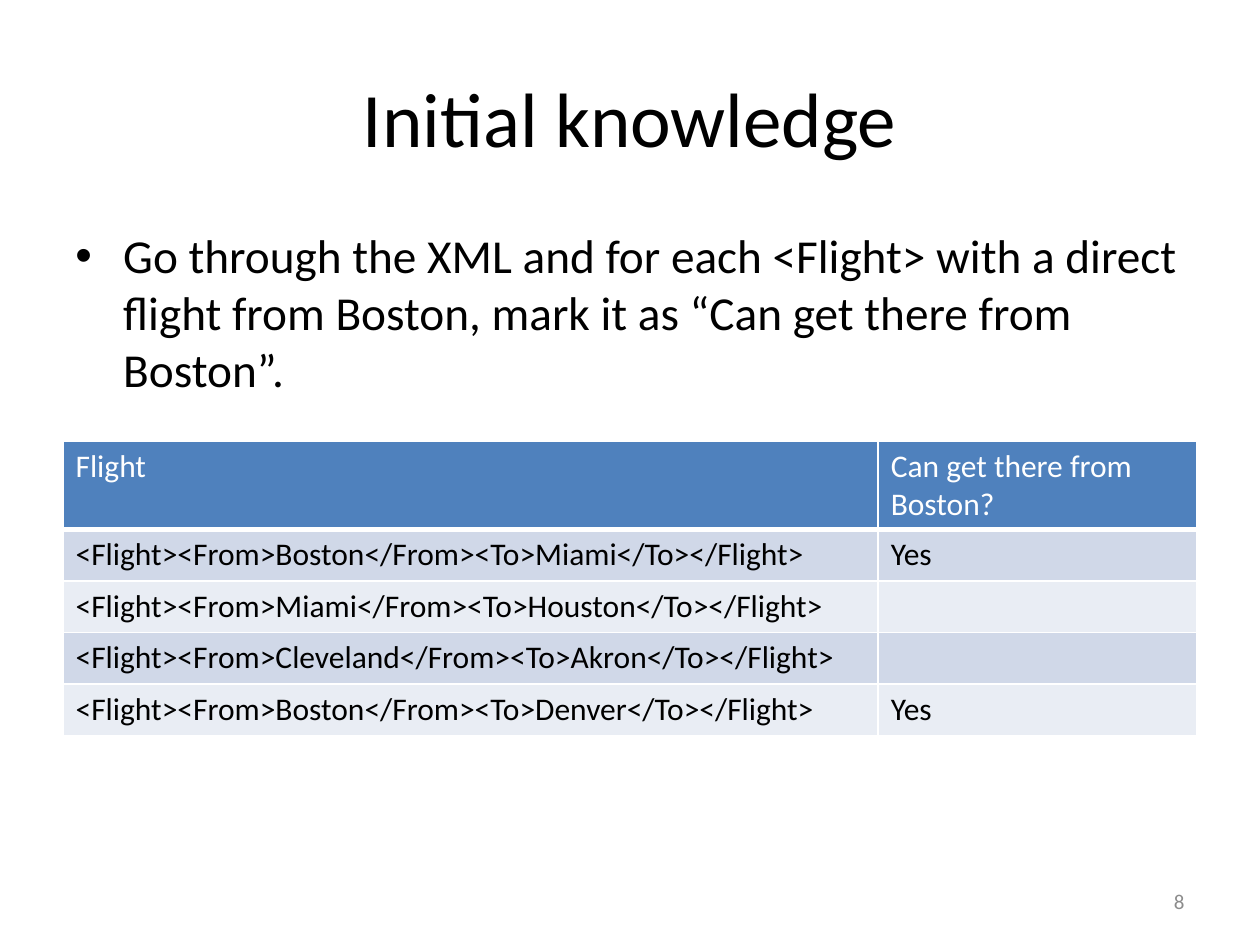
import pptx
import pptx.dml.color
import pptx.enum.text
import pptx.oxml.ns
import pptx.util
from lxml import etree
from pptx.util import Inches

FONT = "Calibri"
COLORS = {
    "text": "000000",
    "header_text": "FFFFFF",
    "header": "4F81BD",
    "band_dark": "D0D8E8",
    "band_light": "E9EDF4",
    "border": "FFFFFF",
    "page_number": "8C8C8C",
}
ALIGN = pptx.enum.text.PP_ALIGN
ANCHOR = pptx.enum.text.MSO_ANCHOR

FLIGHTS = [
    ("Boston", "Miami"),
    ("Miami", "Houston"),
    ("Cleveland", "Akron"),
    ("Boston", "Denver"),
]


def rgb(name):
    return pptx.dml.color.RGBColor.from_string(COLORS[name])


def add_node(parent, tag, **attributes):
    return etree.SubElement(parent, pptx.oxml.ns.qn(tag), **attributes)


def format_runs(paragraph, size, color):
    for run in paragraph.runs:
        run.font.name = FONT
        run.font.size = pptx.util.Pt(size)
        run.font.bold = False
        run.font.color.rgb = rgb(color)


def add_text(slide, text, box, size, color="text", align=ALIGN.LEFT, anchor=ANCHOR.TOP):
    frame = slide.shapes.add_textbox(*map(Inches, box)).text_frame
    frame.word_wrap = True
    frame.vertical_anchor = anchor
    paragraph = frame.paragraphs[0]
    paragraph.text = text
    paragraph.alignment = align
    format_runs(paragraph, size, color)
    return paragraph


def add_bullet(paragraph, indent):
    properties = paragraph._p.get_or_add_pPr()
    properties.set("marL", str(Inches(indent)))
    properties.set("indent", str(-Inches(indent)))
    space_before = add_node(properties, "a:spcBef")
    add_node(space_before, "a:spcPct", val="20000")
    add_node(properties, "a:buFont", typeface="Arial")
    add_node(properties, "a:buChar", char="•")


def set_borders(cell, header):
    properties = cell._tc.get_or_add_tcPr()
    for side in "LRTB":
        width = 3 if header and side == "B" else 1
        line = add_node(properties, f"a:ln{side}", w=str(pptx.util.Pt(width)))
        fill = add_node(line, "a:solidFill")
        add_node(fill, "a:srgbClr", val=COLORS["border"])


def fill_cell(cell, text, fill, color, header):
    cell.text = text
    format_runs(cell.text_frame.paragraphs[0], 18, color)
    set_borders(cell, header)
    cell.fill.solid()
    cell.fill.fore_color.rgb = rgb(fill)


def add_flight_table(slide):
    rows = [("Flight", "Can get there from Boston?")]
    for origin, destination in FLIGHTS:
        flight = f"<Flight><From>{origin}</From><To>{destination}</To></Flight>"
        rows.append((flight, "Yes" if origin == "Boston" else ""))

    frame = slide.shapes.add_table(
        len(rows), 2, Inches(0.5), Inches(3.5), Inches(9), Inches(2.32))
    table = frame.table
    for column, width in zip(table.columns, (6.47, 2.53)):
        column.width = Inches(width)

    for index, row in enumerate(rows):
        header = index == 0
        table.rows[index].height = Inches(0.7 if header else 0.41)
        band = "band_dark" if index % 2 else "band_light"
        for column, text in enumerate(row):
            fill_cell(table.cell(index, column), text,
                      "header" if header else band,
                      "header_text" if header else "text", header)


def main():
    presentation = pptx.Presentation()
    presentation.slide_width = Inches(10)
    presentation.slide_height = Inches(7.5)
    slide = presentation.slides.add_slide(presentation.slide_layouts[6])

    # Title
    add_text(slide, "Initial knowledge", (0.5, 0.3, 9, 1.25), 44,
             align=ALIGN.CENTER, anchor=ANCHOR.MIDDLE)

    # Flights and what is known about them
    add_flight_table(slide)

    # Page number
    add_text(slide, "8", (7.17, 6.95, 2.33, 0.4), 12, "page_number",
             ALIGN.RIGHT, ANCHOR.MIDDLE)

    # Instruction
    instruction = add_text(
        slide,
        "Go through the XML and for each <Flight> with a direct flight from "
        "Boston, mark it as “Can get there from Boston”.",
        (0.5, 1.75, 9, 1.67), 27)
    add_bullet(instruction, 0.38)

    presentation.save("out.pptx")


if __name__ == "__main__":
    main()
